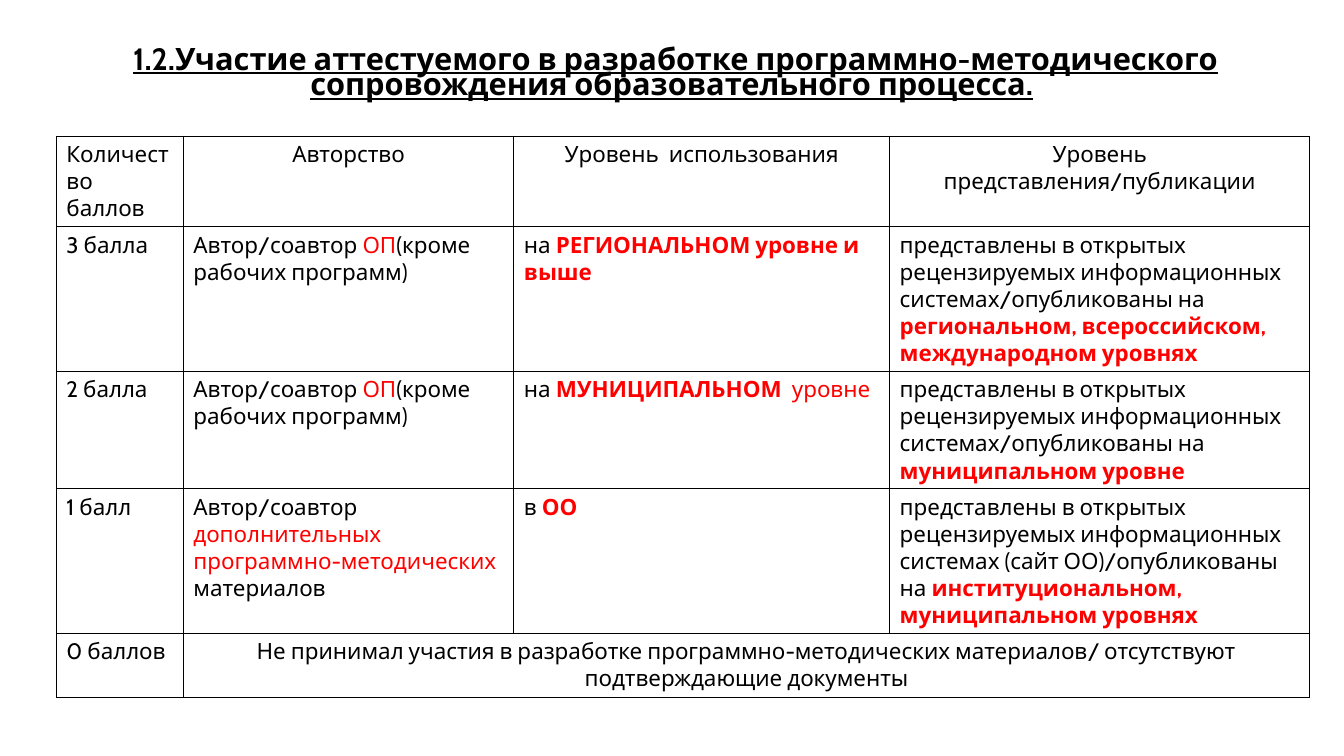
from lxml.etree import SubElement
from pptx import Presentation
from pptx.dml.color import RGBColor
from pptx.enum.text import PP_ALIGN
from pptx.oxml.ns import qn
from pptx.util import Cm, Pt

BLACK = RGBColor(0, 0, 0)
RED = RGBColor(255, 0, 0)
PLAIN = {}
HOT = {"color": RED}
BOLD = {"color": RED, "bold": True}


def add_run(para, text, size=16, font="Cabin", color=BLACK, bold=False, line=False):
    run = para.add_run()
    run.text = text
    face = run.font
    face.size = Pt(size)
    face.name = font
    face.color.rgb = color
    face.bold = bold
    face.underline = line


def add_frame(cell):
    """Draw a thin black border on all four sides of a cell."""
    props = cell._tc.get_or_add_tcPr()
    for spot, side in enumerate(("lnL", "lnR", "lnT", "lnB")):
        edge = SubElement(props, qn(f"a:{side}"), w=str(Pt(1)))
        fill = SubElement(edge, qn("a:solidFill"))
        SubElement(fill, qn("a:srgbClr"), val=str(BLACK))
        props.insert(spot, edge)


deck = Presentation()
deck.slide_width = Cm(33.87)
deck.slide_height = Cm(19.05)
slide = deck.slides.add_slide(deck.slide_layouts[6])

# Title
box = slide.shapes.add_textbox(Cm(1.22), Cm(1.12), Cm(31.12), Cm(17.09))
box.text_frame.word_wrap = True
title = box.text_frame.paragraphs[0]
title.alignment = PP_ALIGN.CENTER
title.line_spacing = 0.7
title.space_before = Pt(10)
title._p.get_or_add_pPr().set("marL", str(Cm(0.3)))
add_run(title, " ", size=22, font="Times New Roman")
add_run(
    title,
    "1.2.Участие аттестуемого в разработке программно-методического "
    "сопровождения образовательного процесса.",
    size=22, bold=True, line=True,
)

# Table: each cell is a list of (text, format) runs
author = [("Автор/соавтор ", PLAIN), ("ОП", HOT), ("(кроме рабочих программ)", PLAIN)]
shown = "представлены в открытых рецензируемых информационных системах"
rows = [
    [
        [("Количество баллов", PLAIN)],
        [("Авторство", PLAIN)],
        [("Уровень  использования", PLAIN)],
        [("Уровень представления/публикации", PLAIN)],
    ],
    [
        [("3 балла", PLAIN)],
        author,
        [("на ", PLAIN), ("РЕГИОНАЛЬНОМ уровне и выше", BOLD)],
        [(shown + "/опубликованы на ", PLAIN),
         ("региональном, всероссийском, международном уровнях", BOLD)],
    ],
    [
        [("2 балла", PLAIN)],
        author,
        [("на ", PLAIN), ("МУНИЦИПАЛЬНОМ", BOLD), ("  уровне", HOT)],
        [(shown + "/опубликованы на ", PLAIN), ("муниципальном уровне", BOLD)],
    ],
    [
        [("1 балл", PLAIN)],
        [("Автор/соавтор ", PLAIN),
         ("дополнительных программно-методических ", HOT),
         ("материалов", PLAIN)],
        [("в ", PLAIN), ("ОО", BOLD)],
        [(shown + " (сайт ОО)/опубликованы на ", PLAIN),
         ("институциональном, муниципальном уровнях", BOLD)],
    ],
    [
        [("0 баллов", PLAIN)],
        [("Не принимал участия в разработке программно-методических материалов/ "
          "отсутствуют подтверждающие документы", PLAIN)],
        [],
        [],
    ],
]
widths = [3.2, 8.33, 9.47, 10.59]
heights = [2.26, 3.61, 2.95, 3.61, 1.6]

grid = slide.shapes.add_table(
    len(heights), len(widths), Cm(1.42), Cm(3.43), Cm(sum(widths)), Cm(sum(heights))
).table
grid.first_row = False
grid.horz_banding = False
for col, width in zip(grid.columns, widths):
    col.width = Cm(width)
for row, height in zip(grid.rows, heights):
    row.height = Cm(height)

last = len(rows) - 1
grid.cell(last, 1).merge(grid.cell(last, 3))
for r, row in enumerate(rows):
    for c, runs in enumerate(row):
        cell = grid.cell(r, c)
        cell.fill.background()
        add_frame(cell)
        para = cell.text_frame.paragraphs[0]
        if c > 0 and r in (0, last):
            para.alignment = PP_ALIGN.CENTER
        for text, style in runs:
            add_run(para, text, **style)

deck.save("out.pptx")
